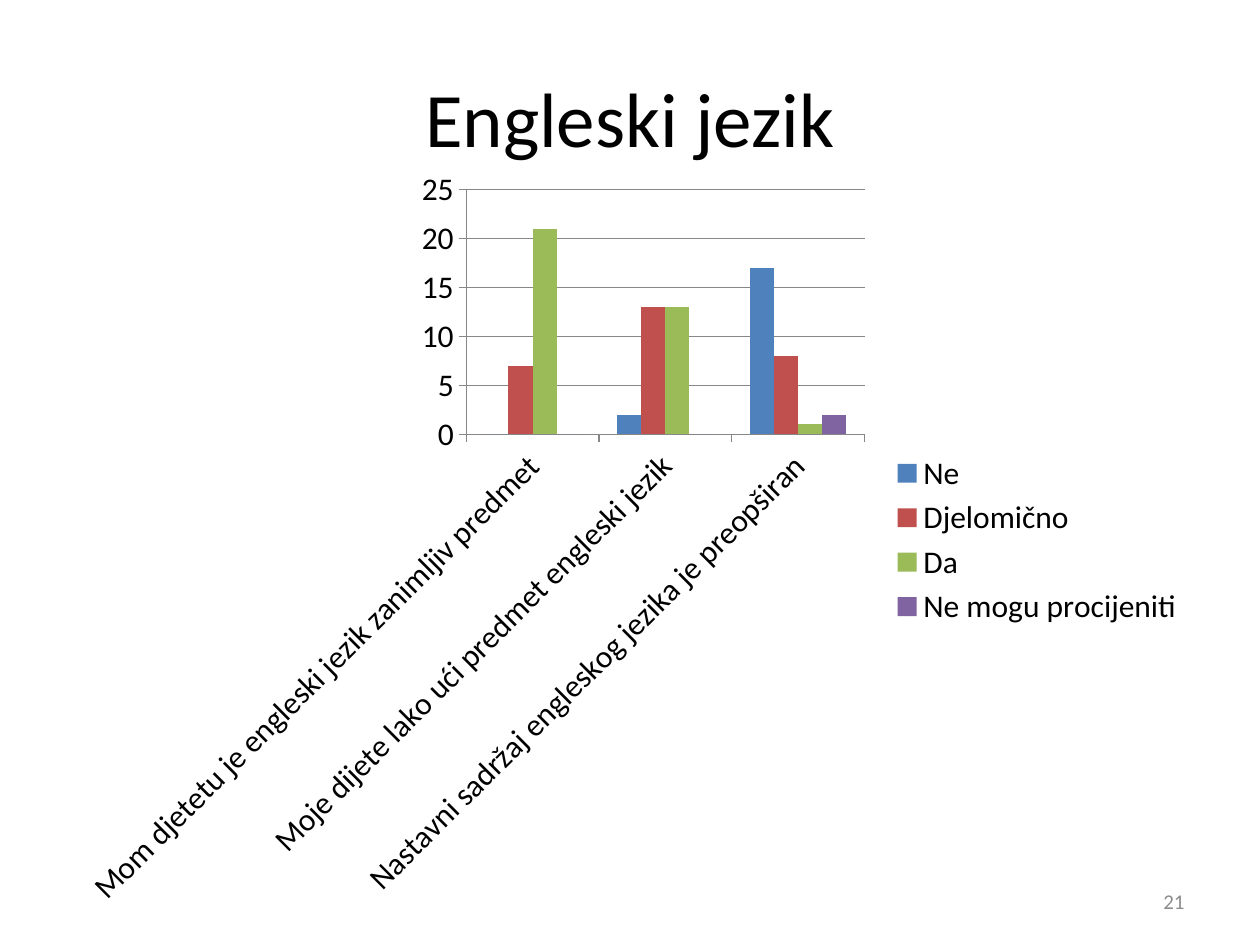
import pptx
import pptx.chart.data
import pptx.dml.color
import pptx.enum.chart
import pptx.enum.text
import pptx.util

FONT = "Calibri"
GREY = "878787"
CATS = [
    "Mom djetetu je engleski jezik zanimljiv predmet",
    "Moje dijete lako ući predmet engleski jezik",
    "Nastavni sadržaj engleskog jezika je preopširan",
]
SERIES = [
    ("Ne", (0, 2, 17), "4F81BD"),
    ("Djelomično", (7, 13, 8), "C0504D"),
    ("Da", (21, 13, 1), "9BBB59"),
    ("Ne mogu procijeniti", (0, 0, 2), "8064A2"),
]


def px(n):
    return pptx.util.Emu(round(n * 914400 / 126))


def color(code):
    return pptx.dml.color.RGBColor.from_string(code)


def style(font, size, code):
    font.name = FONT
    font.size = pptx.util.Pt(size)
    font.color.rgb = color(code)


def write(frame, text, size, code, align):
    frame.word_wrap = True
    frame.vertical_anchor = pptx.enum.text.MSO_ANCHOR.MIDDLE
    para = frame.paragraphs[0]
    para.alignment = align
    run = para.add_run()
    run.text = text
    style(run.font, size, code)


def add_title(slide, box):
    title = slide.shapes.title
    title.left, title.top, title.width, title.height = map(px, box)
    write(title.text_frame, "Engleski jezik", 44, "000000",
          pptx.enum.text.PP_ALIGN.CENTER)


def add_chart(slide, box):
    data = pptx.chart.data.CategoryChartData()
    data.categories = CATS
    for name, vals, _ in SERIES:
        data.add_series(name, vals)
    kind = pptx.enum.chart.XL_CHART_TYPE.COLUMN_CLUSTERED
    chart = slide.shapes.add_chart(kind, *map(px, box), data).chart
    chart.has_title = False
    style(chart.font, 18, "000000")

    # Columns
    plot = chart.plots[0]
    plot.gap_width = 150
    plot.vary_by_categories = False
    for bar, (_, _, code) in zip(plot.series, SERIES):
        bar.format.fill.solid()
        bar.format.fill.fore_color.rgb = color(code)

    # Axes and grid
    cat, val = chart.category_axis, chart.value_axis
    val.has_major_gridlines = True
    for axis in (cat, val):
        axis.major_tick_mark = pptx.enum.chart.XL_TICK_MARK.OUTSIDE
    for part in (cat, val, val.major_gridlines):
        part.format.line.color.rgb = color(GREY)
        part.format.line.width = pptx.util.Pt(0.75)

    # Slanted category labels
    style(cat.tick_labels.font, 18, "000000")
    props = cat._element.find(".//" + pptx.oxml.ns.qn("a:bodyPr"))
    props.set("rot", str(-45 * 60000))
    props.set("vert", "horz")

    # Legend
    chart.has_legend = True
    chart.legend.position = pptx.enum.chart.XL_LEGEND_POSITION.RIGHT
    chart.legend.include_in_layout = False


def add_number(slide, box):
    frame = slide.shapes.add_textbox(*map(px, box)).text_frame
    write(frame, "21", 12, "8C8C8C", pptx.enum.text.PP_ALIGN.RIGHT)


def main():
    deck = pptx.Presentation()
    deck.slide_width, deck.slide_height = px(1260), px(945)
    slide = deck.slides.add_slide(deck.slide_layouts[5])
    add_title(slide, (63, 38, 1134, 158))
    add_chart(slide, (63, 158, 1134, 764))
    add_number(slide, (903, 876, 294, 50))
    deck.save("out.pptx")


if __name__ == "__main__":
    main()
